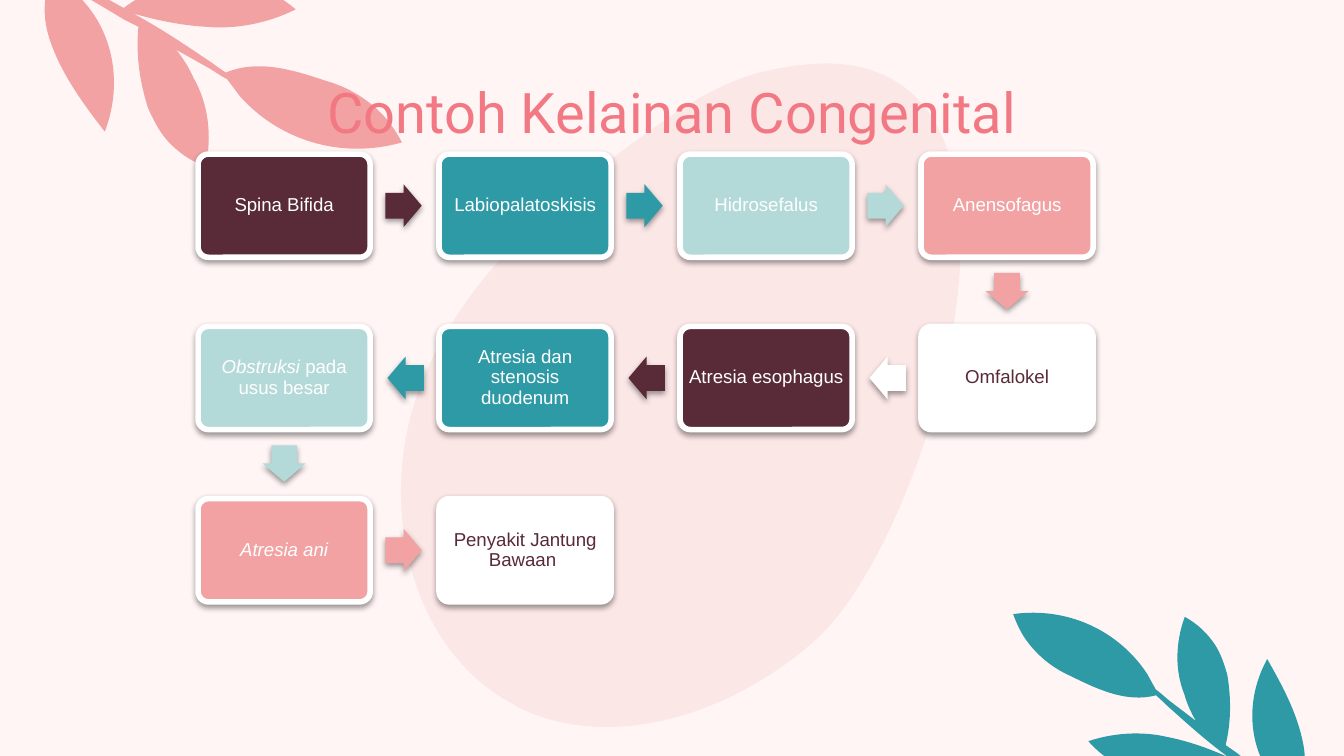
from math import cos, radians, sin

from lxml.etree import SubElement
from pptx import Presentation
from pptx.dml.color import RGBColor
from pptx.enum.shapes import MSO_SHAPE as Preset
from pptx.enum.text import MSO_ANCHOR as Anchor, PP_ALIGN as Align
from pptx.oxml.ns import qn
from pptx.util import Pt

CREAM, WHITE = "FFF5F5", "FFFFFF"
PLUM, TEAL, MINT, PINK, ROSE = "592A37", "2D9AA6", "B4D9D9", "F2A2A2", "F27983"

# Outlines and their boxes are in hundredths of an inch: a start point, then
# lines (x, y) and curves (x1, y1, x2, y2, x, y), as they lie once turned.
OUTLINE_UNIT = 0.72

BLOB_BOX, BLOB_TURN = (324, 22, 392, 537), 21.1
BLOB = [
    (653, 54), (779, 102, 686, 405, 607, 476), (550, 527, 466, 558, 396, 531),
    (391, 529, 386, 527, 382, 524), (304, 483, 281, 375, 311, 292),
    (341, 209, 412, 148, 484, 97), (509, 79, 535, 62, 565, 54),
    (602, 45, 631, 45, 653, 54),
]
BRANCH_BOX, BRANCH_TURN = (-10, -41, 302, 167), 49.1
LOW_BRANCH_BOX, LOW_BRANCH_TURN = (751, 458, 262, 145), 237.1
BRANCH = [
    (220, 7), (185, -23, 132, -24, 92, 6), (69, -7, 47, -18, 32, -26),
    (30, -26), (49, -23, 79, -23, 97, -27), (117, -33, 136, -39, 155, -48),
    (115, -72, 62, -63, 28, -27), (13, -34, 4, -38, 3, -37),
    (3, -37, 3, -37, 4, -37), (5, -35, 15, -30, 29, -21), (37, -17),
    (31, 5, 32, 19, 41, 40), (50, 61, 64, 80, 78, 98), (91, 64, 85, 27, 63, 2),
    (60, -2, 56, -5, 53, -8), (65, -2, 78, 6, 93, 15), (103, 20),
    (101, 41, 104, 61, 110, 80), (114, 89, 118, 97, 124, 104),
    (132, 113, 142, 120, 153, 124), (158, 101, 155, 77, 144, 58),
    (141, 51, 136, 43, 131, 37), (156, 51), (161, 54, 165, 57, 169, 59),
    (172, 63, 175, 67, 178, 71), (207, 104, 253, 119, 299, 106),
    (296, 100, 292, 94, 288, 89), (276, 75, 260, 65, 242, 60),
    (218, 52, 192, 44, 168, 54), (165, 52, 162, 50, 158, 47),
    (143, 37, 123, 23, 99, 10), (116, 15, 135, 19, 154, 20),
    (176, 22, 200, 17, 220, 7),
]

# Label as (text, italic) parts, box colour
STEPS = [
    ([("Spina Bifida", False)], PLUM),
    ([("Labiopalatoskisis", False)], TEAL),
    ([("Hidrosefalus", False)], MINT),
    ([("Anensofagus", False)], PINK),
    ([("Omfalokel", False)], WHITE),
    ([("Atresia esophagus", False)], PLUM),
    ([("Atresia dan stenosis duodenum", False)], TEAL),
    ([("Obstruksi ", True), ("pada usus besar", False)], MINT),
    ([("Atresia ani", True)], PINK),
    ([("Penyakit Jantung Bawaan ", False)], WHITE),
]
COLUMNS = 4
FIRST_X, FIRST_Y = 152.2, 110.2
COLUMN_PITCH, ROW_PITCH = 129.1, 92.3
ARROW_AHEAD, ARROW_BELOW = 64, 45.8


def rgb(hex_color):
    return RGBColor.from_string(hex_color)


def upright(outline, box, turn):
    """Undo the turn and give each segment as points measured from the box corner."""
    left, top, width, height = box
    across, down = cos(radians(turn)), sin(radians(turn))
    segments = []
    for segment in outline:
        pairs = [(x - left - width / 2, y - top - height / 2)
                 for x, y in zip(segment[::2], segment[1::2])]
        segments.append([(Pt((width / 2 + x * across + y * down) * OUTLINE_UNIT),
                          Pt((height / 2 - x * down + y * across) * OUTLINE_UNIT))
                         for x, y in pairs])
    return segments


class Canvas:
    title_font, body_font = "Roboto", "Arial"
    title_size, body_size = 30, 10
    box_size, arrow_size = (92.2, 55.3), (19.5, 23)
    border, inset = 3, 3

    def __init__(self, slide):
        self.slide = slide
        slide.background.fill.solid()
        slide.background.fill.fore_color.rgb = rgb(CREAM)

    def outline(self, segments, drawn_box, box, turn, color, opacity=None):
        """Add curved segments, drawn for one box, fitted into another and turned."""
        start, *ends = [segment[-1] for segment in segments]
        builder = self.slide.shapes.build_freeform(*start)
        builder.add_line_segments(ends, close=True)
        figure = builder.convert_to_shape()
        self.bend(figure, segments, drawn_box)
        figure.left, figure.top, figure.width, figure.height = [
            Pt(length * OUTLINE_UNIT) for length in box]
        figure.rotation = turn
        figure.shadow.inherit = False
        figure.fill.solid()
        figure.fill.fore_color.rgb = rgb(color)
        figure.line.fill.background()
        if opacity:
            tone = figure._element.spPr.find(qn("a:solidFill")).find(qn("a:srgbClr"))
            SubElement(tone, qn("a:alpha"), val=str(opacity * 1000))

    def bend(self, figure, segments, drawn_box):
        """Replace the straight sides of a freeform by its curves."""
        contour = figure._element.spPr.find(".//" + qn("a:path"))
        for side in list(contour):
            contour.remove(side)
        contour.set("w", str(Pt(drawn_box[2] * OUTLINE_UNIT)))
        contour.set("h", str(Pt(drawn_box[3] * OUTLINE_UNIT)))
        for index, points in enumerate(segments):
            straight = "a:lnTo" if index else "a:moveTo"
            side = SubElement(contour, qn("a:cubicBezTo" if len(points) == 3 else straight))
            for x, y in points:
                SubElement(side, qn("a:pt"), x=str(x), y=str(y))
        SubElement(contour, qn("a:close"))

    def title(self, text, left, top, width, height):
        frame = self.slide.shapes.add_textbox(
            Pt(left), Pt(top), Pt(width), Pt(height)).text_frame
        frame.word_wrap = True
        frame.margin_left = frame.margin_right = Pt(7.2)
        frame.margin_top = frame.margin_bottom = Pt(7.2)
        frame.text = text
        heading = frame.paragraphs[0]
        heading.alignment = Align.CENTER
        self.style(heading.runs[0], self.title_font, self.title_size, ROSE)

    def style(self, run, font, size, color, italic=False):
        run.font.name = font
        run.font.size = Pt(size)
        run.font.color.rgb = rgb(color)
        run.font.italic = italic

    def raised(self, preset, center, size, color, adjustments):
        """Add a filled shape around its center, with a soft shadow below."""
        (x, y), (width, height) = center, size
        shape = self.slide.shapes.add_shape(
            preset, Pt(x - width / 2), Pt(y - height / 2), Pt(width), Pt(height))
        for index, value in enumerate(adjustments):
            shape.adjustments[index] = value
        shape.fill.solid()
        shape.fill.fore_color.rgb = rgb(color)
        shape.line.fill.background()
        shape.shadow.inherit = False
        effects = shape._element.spPr.find(qn("a:effectLst"))
        shadow = SubElement(effects, qn("a:outerShdw"), blurRad=str(Pt(3.1)),
                            dist=str(Pt(1.6)), dir="5400000", rotWithShape="0")
        tone = SubElement(shadow, qn("a:srgbClr"), val="000000")
        SubElement(tone, qn("a:alpha"), val="38000")
        return shape

    def box(self, label, center, color):
        box = self.raised(Preset.ROUNDED_RECTANGLE, center, self.box_size, color, [0.1])
        box.line.color.rgb = rgb(WHITE)
        box.line.width = Pt(self.border)
        frame = box.text_frame
        frame.word_wrap = True
        frame.vertical_anchor = Anchor.MIDDLE
        frame.margin_left = frame.margin_right = Pt(self.inset)
        frame.margin_top = frame.margin_bottom = Pt(self.inset)
        paragraph = frame.paragraphs[0]
        paragraph.alignment = Align.CENTER
        paragraph.line_spacing = 0.9
        for text, italic in label:
            run = paragraph.add_run()
            run.text = text
            self.style(run, self.body_font, self.body_size,
                       PLUM if color == WHITE else WHITE, italic)

    def arrow(self, center, color, rotation):
        arrow = self.raised(Preset.RIGHT_ARROW, center, self.arrow_size, color, [0.6, 0.5])
        arrow.rotation = rotation


def draw_steps(canvas):
    """Lay the steps out in rows that run right, then left, then right."""
    for index, (label, color) in enumerate(STEPS):
        row, place = divmod(index, COLUMNS)
        leftward = row % 2 == 1
        column = COLUMNS - 1 - place if leftward else place
        x, y = FIRST_X + column * COLUMN_PITCH, FIRST_Y + row * ROW_PITCH
        canvas.box(label, (x, y), color)
        if index == len(STEPS) - 1:
            continue
        if place == COLUMNS - 1:
            canvas.arrow((x, y + ARROW_BELOW), color, 90)
        elif leftward:
            canvas.arrow((x - ARROW_AHEAD, y), color, 180)
        else:
            canvas.arrow((x + ARROW_AHEAD, y), color, 0)


deck = Presentation()
deck.slide_width, deck.slide_height = Pt(720), Pt(405)
canvas = Canvas(deck.slides.add_slide(deck.slide_layouts[6]))
blob = upright(BLOB, BLOB_BOX, BLOB_TURN)
branch = upright(BRANCH, BRANCH_BOX, BRANCH_TURN)
canvas.outline(blob, BLOB_BOX, BLOB_BOX, BLOB_TURN, PINK, opacity=17)
canvas.outline(branch, BRANCH_BOX, BRANCH_BOX, BRANCH_TURN, PINK)
canvas.outline(branch, BRANCH_BOX, LOW_BRANCH_BOX, LOW_BRANCH_TURN, TEAL)
canvas.title("Contoh Kelainan Congenital", 56.2, 34.2, 607.6, 45.4)
draw_steps(canvas)
deck.save("out.pptx")
